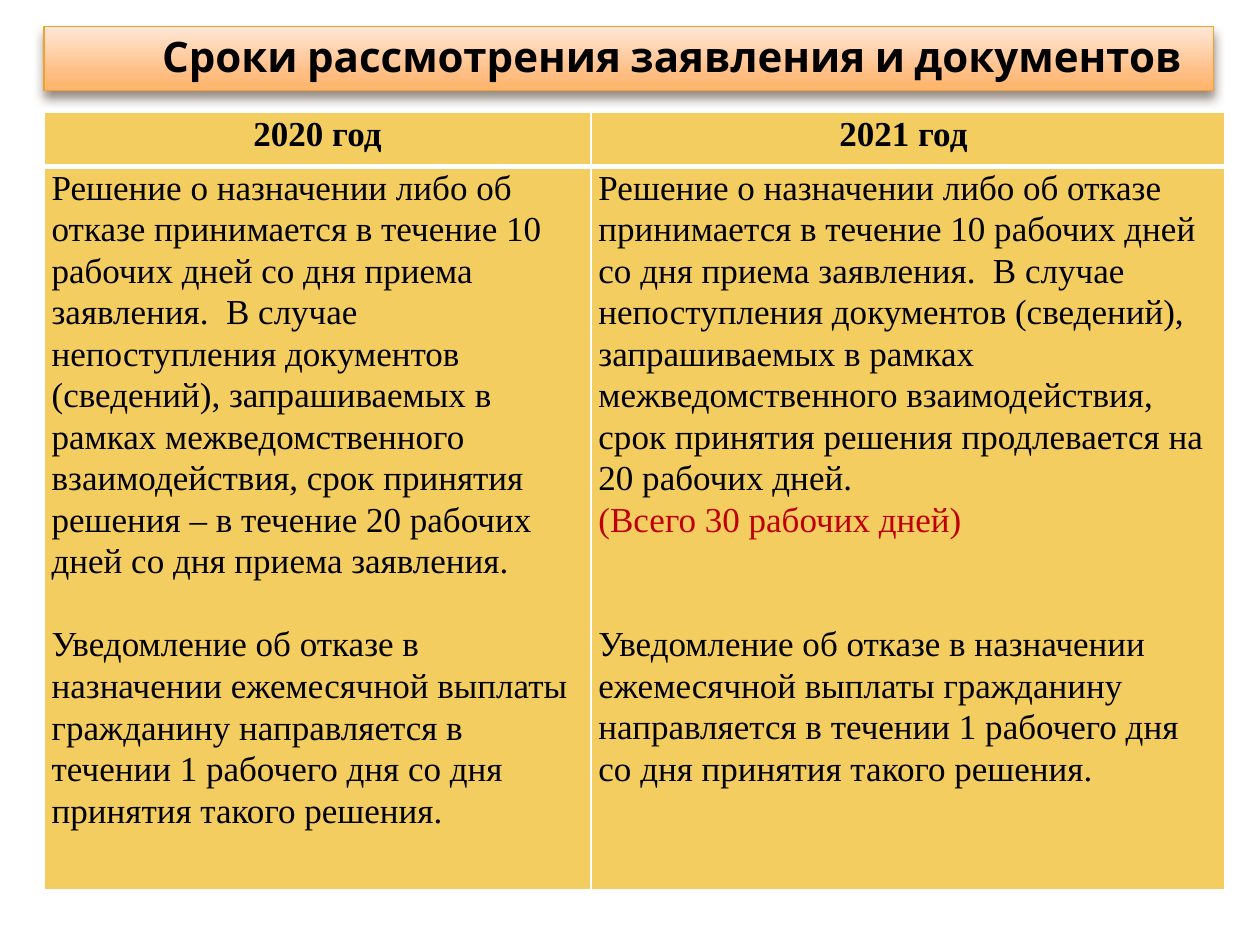
from copy import deepcopy

from lxml import etree
from pptx import Presentation
from pptx.dml.color import RGBColor
from pptx.enum.shapes import MSO_SHAPE as Shape
from pptx.enum.text import MSO_ANCHOR as Anchor, PP_ALIGN as Align
from pptx.oxml import parse_xml
from pptx.oxml.ns import nsdecls, qn
from pptx.util import Inches, Pt

BLACK, WHITE, RED, GOLD = "000000", "FFFFFF", "C00000", "F3CD60"
BANNER_STOPS = [(0, "FFE7D7"), (0.72, "FFBE84"), (1, "FFB468")]
BLANK_LINE = 23.7

DECISION = (
    "Решение о назначении либо об отказе принимается в течение 10 рабочих дней "
    "со дня приема заявления.  В случае непоступления документов (сведений), "
    "запрашиваемых в рамках межведомственного взаимодействия, "
)
NOTICE = (
    "Уведомление об отказе в назначении ежемесячной выплаты гражданину "
    "направляется в течении 1 рабочего дня со дня принятия такого решения."
)
HEADERS = ["2020 год", "2021 год "]
BODIES = [
    [
        (DECISION + "cрок принятия решения – в течение 20 рабочих дней "
         "со дня приема заявления.", BLACK, 0),
        (NOTICE, BLACK, 1),
    ],
    [
        (DECISION + "срок принятия решения продлевается на 20 рабочих дней.", BLACK, 0),
        ("(Всего 30 рабочих дней)", RED, 0),
        (NOTICE, BLACK, 2),
    ],
]


def color(value):
    return RGBColor.from_string(value)


def format_font(paragraph, name, size, value, bold):
    for run in paragraph.runs:
        run.font.name = name
        run.font.size = Pt(size)
        run.font.bold = bold
        run.font.color.rgb = color(value)


def fill_gradient(shape, stops, angle):
    shape.fill.gradient()
    shape.fill.gradient_angle = 360 - angle
    stop_list = shape.fill._xPr.find(".//" + qn("a:gsLst"))
    while len(stop_list) < len(stops):
        stop_list.append(deepcopy(stop_list[0]))
    for stop, (position, value) in zip(shape.fill.gradient_stops, stops):
        stop.position = position
        stop.color.rgb = color(value)


def add_shadow(shape, value, alpha, blur, distance, angle):
    shape.shadow.inherit = False
    effects = shape._element.spPr.find(qn("a:effectLst"))
    effects.append(parse_xml(
        f'<a:outerShdw {nsdecls("a")} blurRad="{Pt(blur)}" dist="{Pt(distance)}" '
        f'dir="{angle * 60000}" rotWithShape="0"><a:srgbClr val="{value}">'
        f'<a:alpha val="{alpha * 1000}"/></a:srgbClr></a:outerShdw>'
    ))


def add_banner(slide, left, top, width, height, text):
    group = slide.shapes.add_group_shape()
    bar = group.shapes.add_shape(Shape.RECTANGLE, left, top, width, height)
    fill_gradient(bar, BANNER_STOPS, 90)
    bar.line.color.rgb = color("F0A22E")
    bar.line.width = Pt(0.79)
    add_shadow(bar, "4E3B30", 60, 6, 4, 90)

    title = group.shapes.add_textbox(left + Inches(0.18), top, width, height)
    frame = title.text_frame
    frame.word_wrap = True
    frame.vertical_anchor = Anchor.MIDDLE
    frame.margin_left = Inches(0.4)
    frame.margin_top = frame.margin_right = frame.margin_bottom = Inches(0.07)
    frame.text = text
    paragraph = frame.paragraphs[0]
    paragraph.alignment = Align.CENTER
    paragraph.line_spacing = 0.9
    format_font(paragraph, "Cabin", 24, BLACK, True)


def style_cell(cell, top, bottom):
    properties = cell._tc.get_or_add_tcPr()
    for side, width in (("L", 1), ("R", 1), ("T", top), ("B", bottom)):
        line = etree.SubElement(properties, qn(f"a:ln{side}"), w=str(Pt(width)))
        fill = etree.SubElement(line, qn("a:solidFill"))
        etree.SubElement(fill, qn("a:srgbClr"), val=WHITE)
    cell.fill.solid()
    cell.fill.fore_color.rgb = color(GOLD)
    cell.margin_left = cell.margin_right = Inches(0.06)
    cell.margin_top = cell.margin_bottom = 0


def write_cell(cell, items, bold, alignment):
    frame = cell.text_frame
    frame.text = "\n".join(text for text, _, _ in items)
    for paragraph, (_, value, gap) in zip(frame.paragraphs, items):
        paragraph.alignment = alignment
        paragraph.line_spacing = 1.07
        paragraph.space_before = Pt(gap * BLANK_LINE)
        format_font(paragraph, "Times New Roman", 20, value, bold)


def add_comparison(slide, left, top, width, height):
    table = slide.shapes.add_table(2, 2, left, top, width, height).table
    header_height, first_width = Inches(0.43), Inches(4.34)
    table.rows[0].height = header_height
    table.rows[1].height = height - header_height
    table.columns[0].width = first_width
    table.columns[1].width = width - first_width
    for column, (header, body) in enumerate(zip(HEADERS, BODIES)):
        header_cell, body_cell = table.cell(0, column), table.cell(1, column)
        style_cell(header_cell, 1, 3)
        write_cell(header_cell, [(header, BLACK, 0)], True, Align.CENTER)
        style_cell(body_cell, 3, 1)
        write_cell(body_cell, body, False, Align.LEFT)


def main():
    presentation = Presentation()
    presentation.slide_width = Inches(10)
    presentation.slide_height = Inches(7.5)
    slide = presentation.slides.add_slide(presentation.slide_layouts[6])
    add_banner(slide, Inches(0.35), Inches(0.21), Inches(9.28), Inches(0.51),
               "Сроки рассмотрения заявления и документов")
    add_comparison(slide, Inches(0.35), Inches(0.89), Inches(9.37), Inches(6.17))
    presentation.save("out.pptx")


if __name__ == "__main__":
    main()
